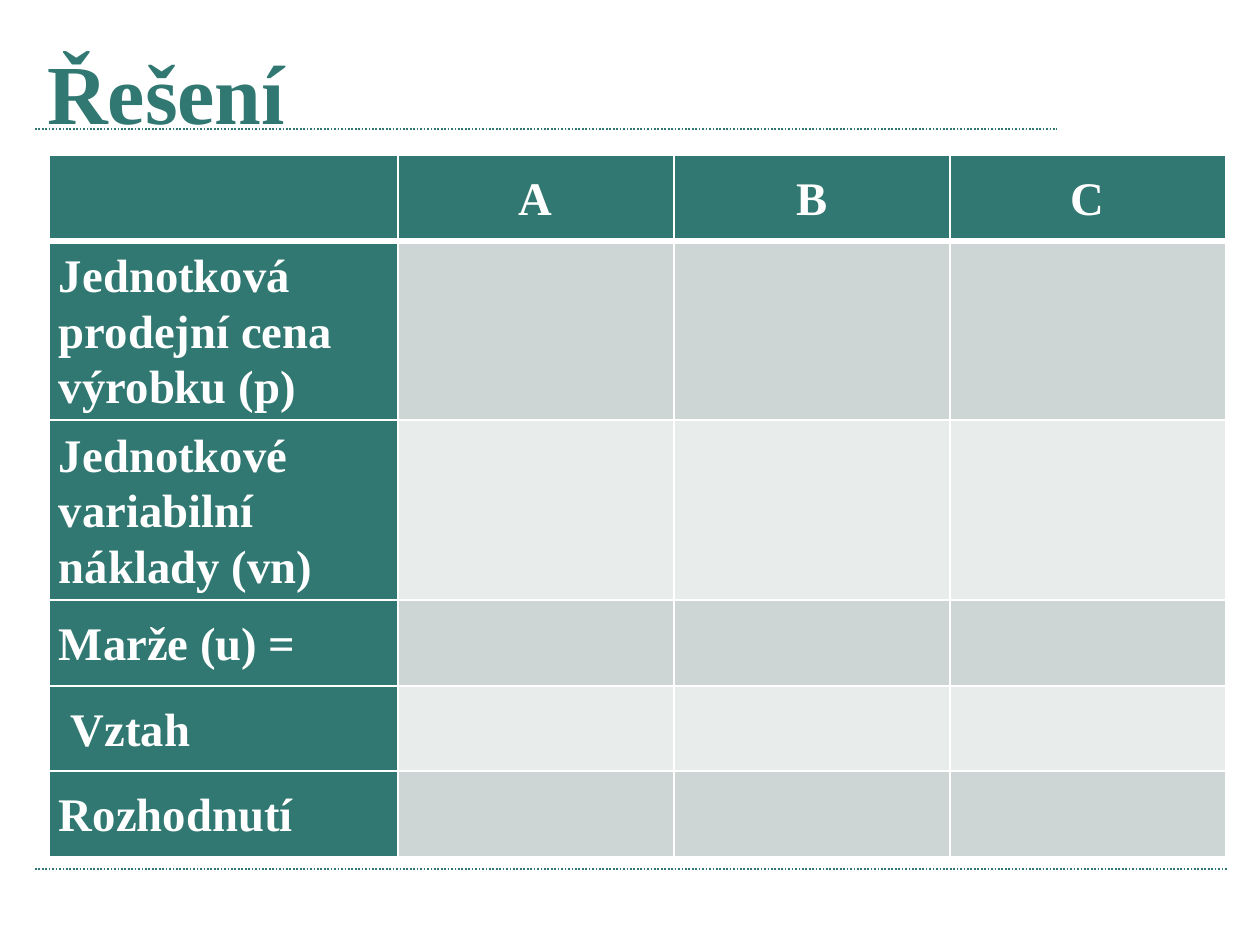
from lxml.etree import SubElement
from pptx import Presentation
from pptx.dml.color import RGBColor
from pptx.enum.dml import MSO_LINE
from pptx.enum.shapes import MSO_CONNECTOR
from pptx.enum.text import MSO_ANCHOR, MSO_AUTO_SIZE, PP_ALIGN
from pptx.oxml.ns import qn
from pptx.util import Pt

COLORS = {"teal": "307871", "dark_band": "CDD6D5", "light_band": "E8ECEB", "white": "FFFFFF"}
FONT = "Times New Roman"


def style_text(paragraph, size, color):
    font = paragraph.font
    font.name, font.size, font.bold = FONT, Pt(size), True
    font.color.rgb = RGBColor.from_string(COLORS[color])


def add_border(cell, side, width):
    line = SubElement(cell._tc.get_or_add_tcPr(), qn(f"a:ln{side}"), w=str(Pt(width)))
    fill = SubElement(line, qn("a:solidFill"))
    SubElement(fill, qn("a:srgbClr"), val=COLORS["white"])


presentation = Presentation()
presentation.slide_width, presentation.slide_height = Pt(540), Pt(405)
slide = presentation.slides.add_slide(presentation.slide_layouts[5])

for right, y in [(453, 55.2), (526, 372.4)]:
    rule = slide.shapes.add_connector(MSO_CONNECTOR.STRAIGHT, Pt(15), Pt(y), Pt(right), Pt(y))
    rule.line.width = Pt(0.75)
    rule.line.color.rgb = RGBColor.from_string(COLORS["teal"])
    rule.line.dash_style = MSO_LINE.ROUND_DOT
    SubElement(rule._element.spPr, qn("a:effectLst"))

title = slide.shapes.title
title.left, title.top, title.width, title.height = Pt(13), Pt(10), Pt(476), Pt(42.5)
title_frame = title.text_frame
title_frame.text = "Řešení"
title_frame.auto_size = MSO_AUTO_SIZE.NONE
title_frame.vertical_anchor = MSO_ANCHOR.TOP
title_frame.margin_top, title_frame.margin_bottom = Pt(7.2), Pt(0)
title_frame.paragraphs[0].alignment = PP_ALIGN.LEFT
style_text(title_frame.paragraphs[0], 36, "teal")

products = ["", "A", "B", "C"]
criteria = [
    "Jednotková prodejní cena výrobku (p)",
    "Jednotkové variabilní náklady (vn)",
    "Marže (u) =",
    "Vztah",
    "Rozhodnutí",
]
column_widths = [149.5, 118.3, 118.3, 118.3]
row_heights = [36.7, 77, 77, 36.7, 36.7, 36.7]
table = slide.shapes.add_table(
    len(row_heights), len(column_widths), Pt(21), Pt(66.5), Pt(sum(column_widths)), Pt(sum(row_heights))
).table
for column, width in zip(table.columns, column_widths):
    column.width = Pt(width)

for row_index, height in enumerate(row_heights):
    table.rows[row_index].height = Pt(height)
    for column_index, product in enumerate(products):
        cell = table.cell(row_index, column_index)
        for side in "LRTB":
            under_header = (row_index, side) in [(0, "B"), (1, "T")]
            add_border(cell, side, 3 if under_header else 1)
        if row_index == 0 or column_index == 0:
            fill_name = "teal"
        else:
            fill_name = "dark_band" if row_index % 2 else "light_band"
        cell.fill.solid()
        cell.fill.fore_color.rgb = RGBColor.from_string(COLORS[fill_name])

        if fill_name == "teal":
            text = criteria[row_index - 1] if row_index else product
            cell.text = text
            cell.vertical_anchor = MSO_ANCHOR.MIDDLE
            cell.margin_left = Pt(9.3 if text == "Vztah" else 4.3)
            cell.margin_right = Pt(4.3)
            cell.margin_top = cell.margin_bottom = Pt(0)
            paragraph = cell.text_frame.paragraphs[0]
            paragraph.alignment = PP_ALIGN.LEFT if row_index else PP_ALIGN.CENTER
            paragraph.line_spacing = 1.07
            style_text(paragraph, 20, "white")

presentation.save("out.pptx")
